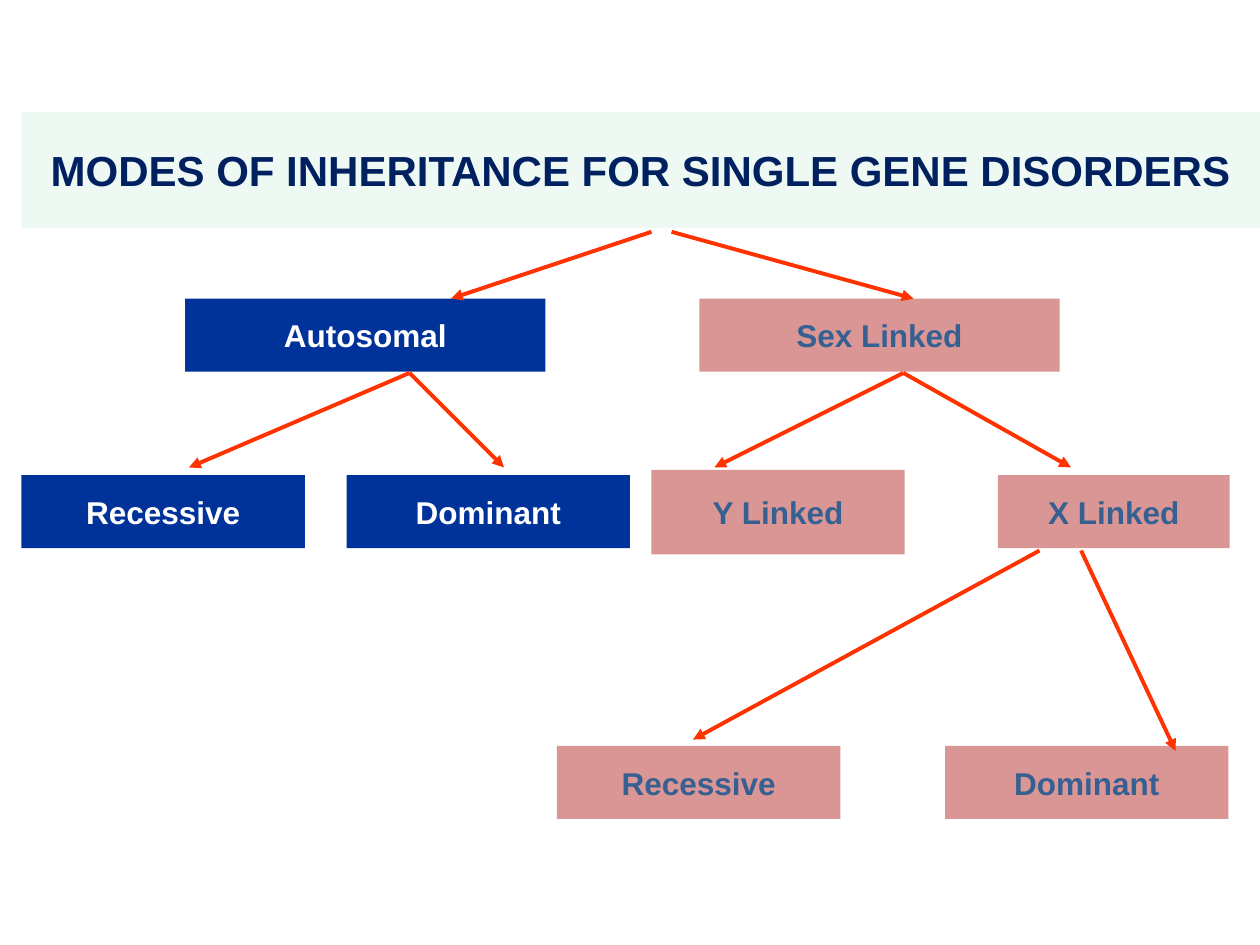
from lxml import etree
from pptx import Presentation
from pptx.dml.color import RGBColor
from pptx.enum.shapes import MSO_CONNECTOR, MSO_SHAPE
from pptx.enum.text import MSO_ANCHOR, PP_ALIGN
from pptx.oxml.ns import qn
from pptx.util import Inches, Pt

TITLE = {"fill": "EEF9F4", "color": "002060", "size": 24}
AUTOSOMAL = {"fill": "003399", "color": "FFFFFF", "size": 18}
SEX_LINKED = {"fill": "D99694", "color": "376092", "size": 18}
ARROW_COLOR = "FF3300"

BOX_HEIGHT = 0.58
GROUP_TOP, TYPE_TOP, X_LINKED_TOP = 2.37, 3.77, 5.92
GROUP_WIDTH, TYPE_WIDTH = 2.86, 2.25

# text, left, top, width, height, style
BOXES = [
    ("MODES OF INHERITANCE FOR SINGLE GENE DISORDERS", 0.17, 0.89, 9.83, 0.92, TITLE),
    ("Autosomal", 1.47, GROUP_TOP, GROUP_WIDTH, BOX_HEIGHT, AUTOSOMAL),
    ("Sex Linked", 5.55, GROUP_TOP, GROUP_WIDTH, BOX_HEIGHT, SEX_LINKED),
    ("Recessive", 0.17, TYPE_TOP, TYPE_WIDTH, BOX_HEIGHT, AUTOSOMAL),
    ("Dominant", 2.75, TYPE_TOP, TYPE_WIDTH, BOX_HEIGHT, AUTOSOMAL),
    ("Y Linked", 5.17, 3.73, 2.01, 0.67, SEX_LINKED),
    ("X Linked", 7.92, TYPE_TOP, 1.84, BOX_HEIGHT, SEX_LINKED),
    ("Recessive", 4.42, X_LINKED_TOP, TYPE_WIDTH, BOX_HEIGHT, SEX_LINKED),
    ("Dominant", 7.5, X_LINKED_TOP, TYPE_WIDTH, BOX_HEIGHT, SEX_LINKED),
]

# start, end
ARROWS = [
    ((5.17, 1.84), (3.58, 2.37)),
    ((5.33, 1.84), (7.25, 2.37)),
    ((3.25, 2.96), (1.5, 3.71)),
    ((3.25, 2.96), (4, 3.71)),
    ((7.17, 2.96), (5.67, 3.71)),
    ((7.17, 2.96), (8.5, 3.71)),
    ((8.25, 4.37), (5.5, 5.87)),
    ((8.58, 4.37), (9.33, 5.96)),
]


def rgb(color):
    return RGBColor.from_string(color)


def set_attributes(target, values):
    for name, value in values.items():
        setattr(target, name, value)


def add_box(slide, text, left, top, width, height, style):
    shape = slide.shapes.add_shape(
        MSO_SHAPE.RECTANGLE, *map(Inches, (left, top, width, height)))
    shape.shadow.inherit = False
    shape.fill.solid()
    shape.fill.fore_color.rgb = rgb(style["fill"])
    shape.line.fill.background()
    set_attributes(shape.text_frame,
                   {"word_wrap": False, "vertical_anchor": MSO_ANCHOR.MIDDLE})
    paragraph = shape.text_frame.paragraphs[0]
    paragraph.alignment = PP_ALIGN.CENTER
    run = paragraph.add_run()
    run.text = text
    set_attributes(run.font, {"name": "Arial", "size": Pt(style["size"]), "bold": True})
    run.font.color.rgb = rgb(style["color"])


def add_arrow(slide, start, end):
    connector = slide.shapes.add_connector(
        MSO_CONNECTOR.STRAIGHT, *map(Inches, start + end))
    connector.line.color.rgb = rgb(ARROW_COLOR)
    connector.line.width = Pt(2.25)
    properties = connector.element.spPr
    etree.SubElement(properties.find(qn("a:ln")), qn("a:tailEnd"), type="triangle")
    etree.SubElement(properties, qn("a:effectLst"))


def main():
    presentation = Presentation()
    set_attributes(presentation, {"slide_width": Inches(10), "slide_height": Inches(7.5)})
    slide = presentation.slides.add_slide(presentation.slide_layouts[6])
    for box in BOXES:
        add_box(slide, *box)
    for start, end in ARROWS:
        add_arrow(slide, start, end)
    presentation.save("out.pptx")


if __name__ == "__main__":
    main()
